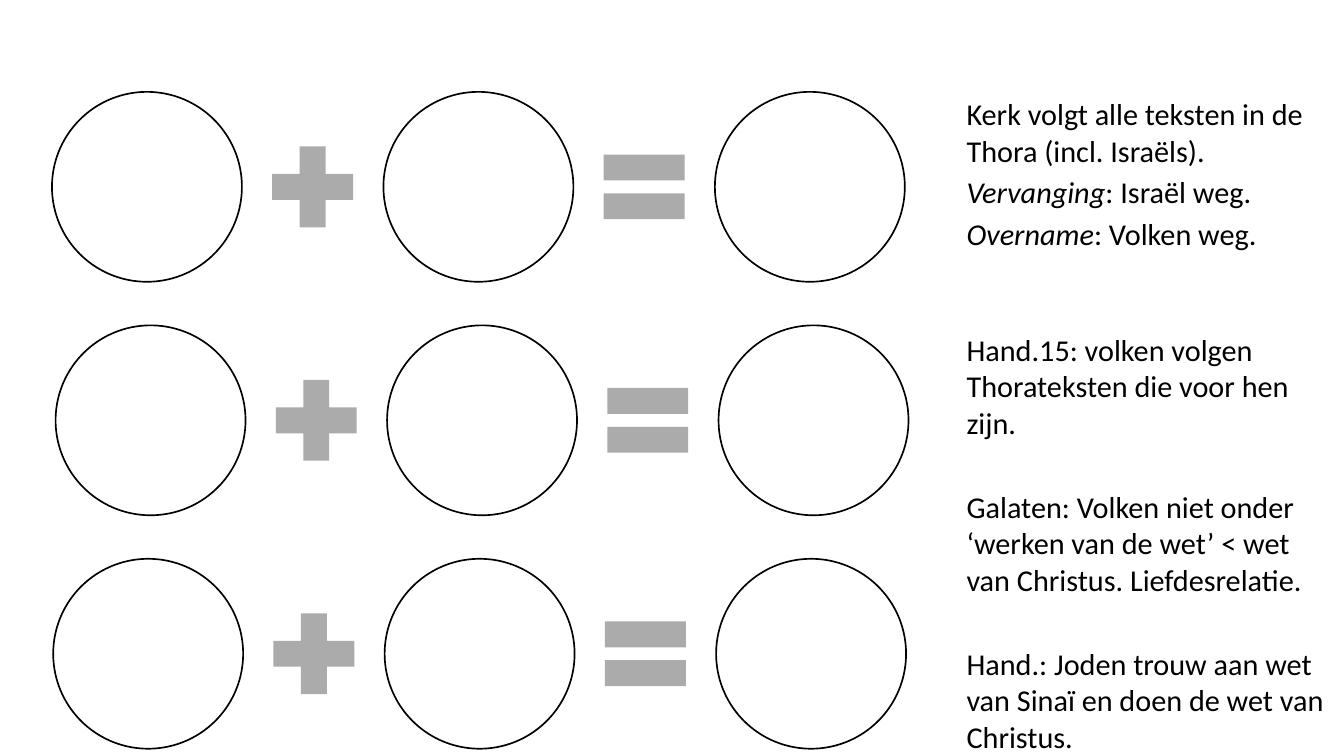
from lxml import etree
from pptx import Presentation
from pptx import util as u
from pptx.dml.color import RGBColor
from pptx.enum import shapes, text
from pptx.oxml import ns

COLORS = {"circle": "FFFFFF", "outline": "000000", "sign": "ABABAB", "text": "000000"}

presentation = Presentation()
presentation.slide_width = u.Inches(11.11)
presentation.slide_height = u.Inches(6.25)
slide = presentation.slides.add_slide(presentation.slide_layouts[3])  # Two Content

# Grid of the sums: three rows of circle + circle = circle
ROW_LEFTS = [0.43, 0.46, 0.44]
TOP, ROW_STEP, COLUMN_STEP = 0.76, 1.93, 2.74
CIRCLE, SIGN = 1.57, 0.91
SIGN_SHIFT = 1.7
SIGN_DROP = (CIRCLE - SIGN) / 2


def add_part(group, kind, left, top, size, fill, outline=None):
    shape = group.shapes.add_shape(kind, *map(u.Inches, (left, top, size, size)))
    shape.shadow.inherit = False
    shape.fill.solid()
    shape.fill.fore_color.rgb = RGBColor.from_string(COLORS[fill])
    if outline:
        shape.line.color.rgb = RGBColor.from_string(COLORS[outline])
        shape.line.width = u.Pt(1)
    else:
        shape.line.fill.background()


def write_paragraph(paragraph, runs, size=18, font="Calibri", color="text", before=3.3):
    """Write (words, italic) runs into one indented paragraph without a bullet."""
    paragraph.space_before = u.Pt(before)
    properties = paragraph._p.get_or_add_pPr()
    properties.set("marL", str(u.Inches(0.13)))
    properties.set("indent", "0")
    etree.SubElement(properties, ns.qn("a:buNone"))
    for words, italic in runs:
        run = paragraph.add_run()
        run.text = words
        run.font.size = u.Pt(size)
        run.font.name = font
        run.font.italic = italic
        run.font.color.rgb = RGBColor.from_string(COLORS[color])


# Circles and signs, one group per row
signs = [shapes.MSO_SHAPE.MATH_PLUS, shapes.MSO_SHAPE.MATH_EQUAL]
for row, row_left in enumerate(ROW_LEFTS):
    group = slide.shapes.add_group_shape()
    top = TOP + row * ROW_STEP
    for column in range(3):
        left = row_left + column * COLUMN_STEP
        add_part(group, shapes.MSO_SHAPE.OVAL, left, top, CIRCLE, "circle", "outline")
        if column < len(signs):
            add_part(group, signs[column], left + SIGN_SHIFT, top + SIGN_DROP, SIGN, "sign")

# Explanations to the right: top, height, space between paragraphs, paragraphs
explanations = [
    (2.69, 3.5, 28.6, [
        [("Hand.15: volken volgen Thorateksten die voor hen zijn.", False)],
        [("Galaten: Volken niet onder ‘werken van de wet’ < wet van Christus. Liefdesrelatie.", False)],
        [("Hand.: Joden trouw aan wet van Sinaï en doen de wet van Christus.", False)],
    ]),
    (0.74, 1.7, 3.3, [
        [("Kerk volgt alle teksten in de Thora (incl. Israëls).", False)],
        [("Vervanging", True), (": Israël weg.", False)],
        [("Overname", True), (": Volken weg.", False)],
    ]),
]
title, *bodies = list(slide.placeholders)[:3]
for body, (top, height, gap, paragraphs) in zip(bodies, explanations):
    body.left, body.top = u.Inches(7.76), u.Inches(top)
    body.width, body.height = u.Inches(3.35), u.Inches(height)
    frame = body.text_frame
    frame.word_wrap = True
    frame.auto_size = text.MSO_AUTO_SIZE.NONE
    frame.vertical_anchor = text.MSO_ANCHOR.TOP
    for number, runs in enumerate(paragraphs):
        paragraph = frame.add_paragraph() if number else frame.paragraphs[0]
        write_paragraph(paragraph, runs, before=gap if number else 3.3)

# Remove the empty placeholders
for placeholder in list(slide.placeholders):
    if not placeholder.text_frame.text:
        placeholder._element.getparent().remove(placeholder._element)

presentation.save("out.pptx")
